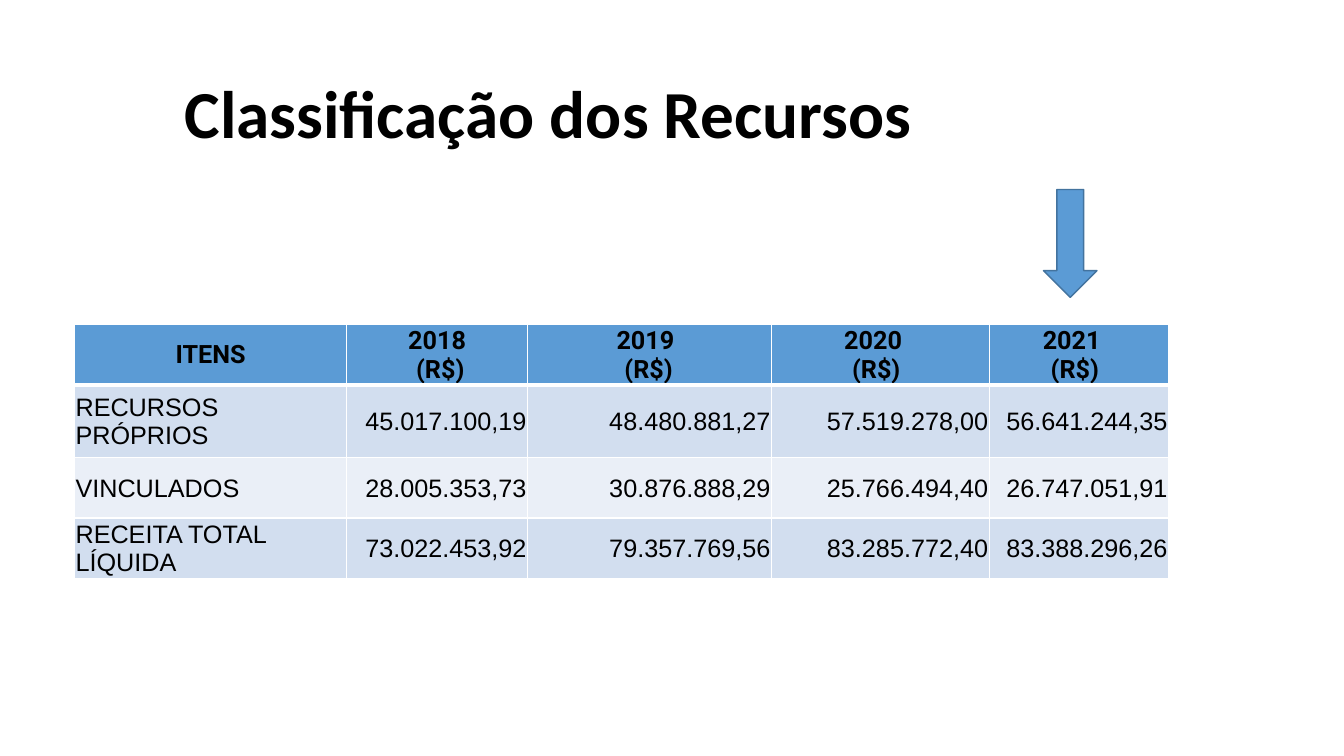
from dataclasses import dataclass

from lxml import etree
from pptx import Presentation
from pptx.dml.color import RGBColor
from pptx.enum.shapes import MSO_SHAPE
from pptx.enum.text import MSO_ANCHOR, MSO_AUTO_SIZE, PP_ALIGN
from pptx.oxml.ns import qn
from pptx.util import Inches, Pt

LEFT, CENTER, RIGHT = PP_ALIGN.LEFT, PP_ALIGN.CENTER, PP_ALIGN.RIGHT
MIDDLE = MSO_ANCHOR.MIDDLE
NO_AUTOFIT = MSO_AUTO_SIZE.NONE
DOWN_ARROW = MSO_SHAPE.DOWN_ARROW


@dataclass(frozen=True)
class Theme:
    """Colours, fonts and point sizes of the slide."""
    text: str = "000000"
    accent: str = "5B9BD5"
    outline: str = "43739E"
    border: str = "FFFFFF"
    bands: tuple = ("D2DEEF", "EAEFF7")
    title_font: str = "Calibri"
    header_font: str = "Roboto"
    body_font: str = "Arial"
    title_size: int = 48
    table_size: int = 18
    thin: int = 1
    thick: int = 3


def write_text(frame, text, *, font, size, color, bold=False, align=LEFT, spacing=1.0):
    """Fill a text frame with one formatted paragraph per line."""
    frame.word_wrap = True
    frame.vertical_anchor = MIDDLE
    for index, line in enumerate(text.split("\n")):
        paragraph = frame.add_paragraph() if index else frame.paragraphs[0]
        paragraph.alignment = align
        paragraph.line_spacing = spacing
        run = paragraph.add_run()
        run.text = line
        run.font.name = font
        run.font.size = Pt(size)
        run.font.bold = bold
        run.font.color.rgb = RGBColor.from_string(color)


class SlideBuilder:
    """Places elements on a slide, with lengths in percent of its size."""

    def __init__(self, presentation, theme):
        """Add a title-only slide."""
        self.presentation = presentation
        self.theme = theme
        self.slide = presentation.slides.add_slide(presentation.slide_layouts[5])

    def across(self, percent):
        """Turn a share of the width into a length."""
        return int(self.presentation.slide_width * percent / 100)

    def down(self, percent):
        """Turn a share of the height into a length."""
        return int(self.presentation.slide_height * percent / 100)

    def box(self, left, top, width, height):
        """Turn four shares into a position and a size."""
        return self.across(left), self.down(top), self.across(width), self.down(height)

    def title(self, text, *place):
        """Move the title placeholder and write in it."""
        title = self.slide.shapes.title
        title.left, title.top, title.width, title.height = self.box(*place)
        write_text(title.text_frame, text, font=self.theme.title_font,
                   size=self.theme.title_size, color=self.theme.text,
                   bold=True, align=CENTER, spacing=0.9)
        title.text_frame.auto_size = NO_AUTOFIT

    def arrow(self, *place):
        """Draw a block arrow that points down."""
        arrow = self.slide.shapes.add_shape(DOWN_ARROW, *self.box(*place))
        arrow.shadow.inherit = False
        arrow.fill.solid()
        arrow.fill.fore_color.rgb = RGBColor.from_string(self.theme.accent)
        arrow.line.color.rgb = RGBColor.from_string(self.theme.outline)
        arrow.line.width = Pt(self.theme.thin)

    def borders(self, cell, row):
        """Rule a cell, with a thick line under the header row."""
        thick_side = {0: "lnB", 1: "lnT"}.get(row)
        properties = cell._tc.get_or_add_tcPr()
        for side in ("lnL", "lnR", "lnT", "lnB"):
            weight = self.theme.thick if side == thick_side else self.theme.thin
            line = etree.SubElement(properties, qn(f"a:{side}"), w=str(Pt(weight)))
            fill = etree.SubElement(line, qn("a:solidFill"))
            etree.SubElement(fill, qn("a:srgbClr"), val=self.theme.border)

    def cell(self, cell, text, row, column):
        """Format one table cell by its row and column."""
        theme, header = self.theme, row == 0
        cell.margin_left = cell.margin_top = Inches(0.01)
        cell.margin_right = Inches(0.09 if header and column > 1 else 0.01)
        cell.margin_bottom = 0
        cell.vertical_anchor = MIDDLE
        self.borders(cell, row)
        cell.fill.solid()
        color = theme.accent if header else theme.bands[(row - 1) % 2]
        cell.fill.fore_color.rgb = RGBColor.from_string(color)
        align = CENTER if header else RIGHT if column else LEFT
        write_text(cell.text_frame, text, size=theme.table_size, color=theme.text,
                   font=theme.header_font if header else theme.body_font,
                   bold=header, align=align)

    def table(self, rows, left, top, widths, heights):
        """Add a table with a header row and banded body rows."""
        place = self.box(left, top, sum(widths), sum(heights))
        table = self.slide.shapes.add_table(len(rows), len(widths), *place).table
        for column, width in zip(table.columns, widths):
            column.width = self.across(width)
        for row, height in zip(table.rows, heights):
            row.height = self.down(height)
        for row, texts in enumerate(rows):
            for column, text in enumerate(texts):
                self.cell(table.cell(row, column), text, row, column)


REVENUE = [
    ("ITENS", "2018\n (R$)", "2019\n (R$)", "2020 \n(R$)", "2021 \n(R$)"),
    ("RECURSOS PRÓPRIOS", "45.017.100,19", "48.480.881,27", "57.519.278,00", "56.641.244,35"),
    ("VINCULADOS", "28.005.353,73", "30.876.888,29", "25.766.494,40", "26.747.051,91"),
    ("RECEITA TOTAL LÍQUIDA", "73.022.453,92", "79.357.769,56", "83.285.772,40", "83.388.296,26"),
]


def main():
    """Build and save the presentation."""
    presentation = Presentation()
    presentation.slide_width, presentation.slide_height = Inches(13.33), Inches(7.5)
    builder = SlideBuilder(presentation, Theme())
    builder.title("Classificação dos Recursos", 5.55, 5.87, 70.52, 19.2)
    builder.table(REVENUE, 5.55, 42.93, widths=(20.25, 13.45, 18.15, 16.2, 13.35),
                  heights=(8, 9.6, 8, 8))
    builder.arrow(77.64, 25.07, 3.98, 14.27)
    presentation.save("out.pptx")


if __name__ == "__main__":
    main()
